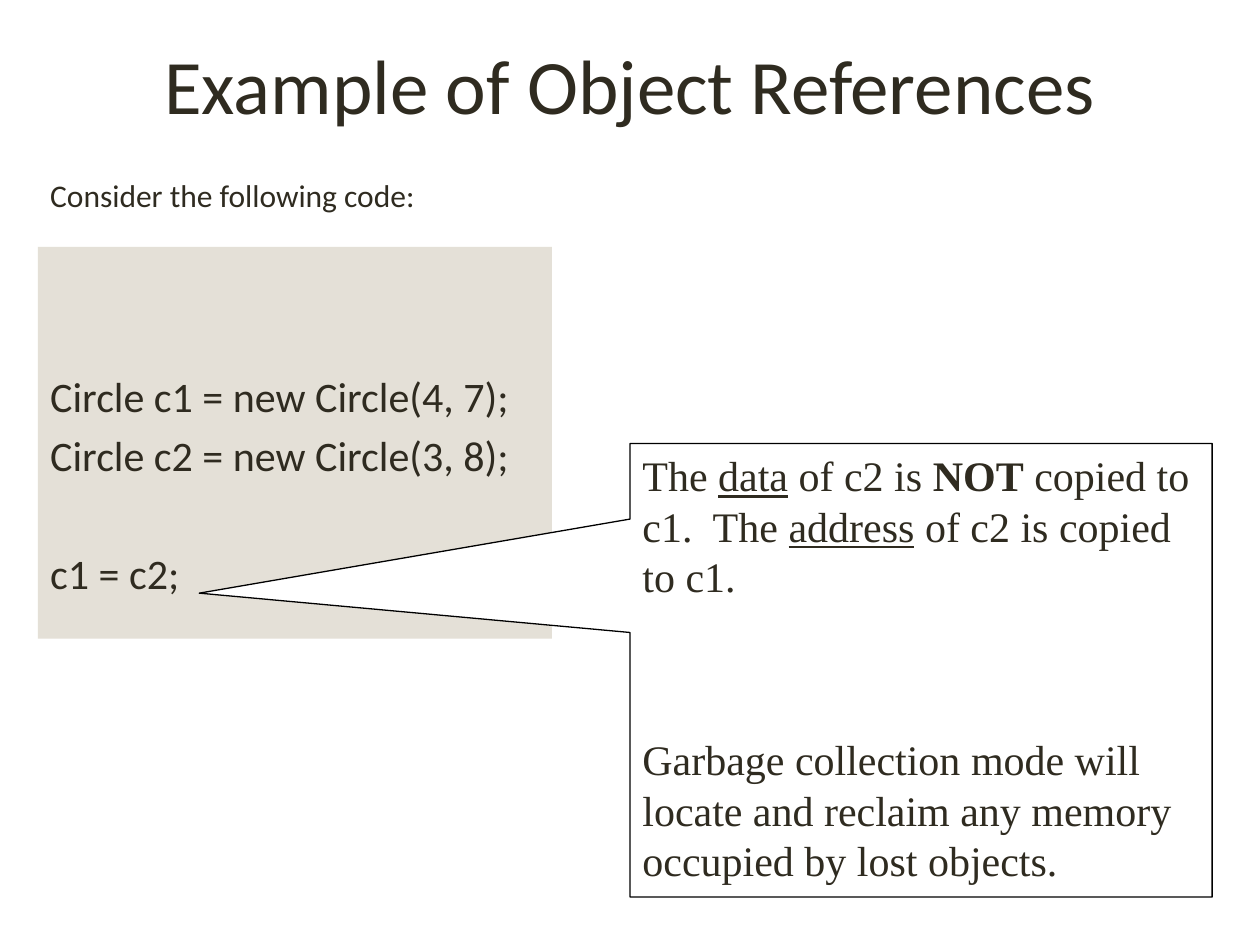
from pptx import Presentation
from pptx.dml.color import RGBColor
from pptx.enum.shapes import MSO_SHAPE
from pptx.enum.text import MSO_ANCHOR, PP_ALIGN
from pptx.util import Inches, Pt

COLORS = {"text": "2F2B20", "code": "E4E0D7", "note": "FFFFFF", "line": "000000"}


def color(name):
    """Return the palette colour with this name."""
    return RGBColor.from_string(COLORS[name])


def write(shape, paras, size=24, font="Calibri", align=PP_ALIGN.LEFT,
          anchor=MSO_ANCHOR.TOP, wrap=True, gaps=()):
    """Fill a shape with paragraphs made of (text, style) runs."""
    frame = shape.text_frame
    frame.word_wrap = wrap
    frame.vertical_anchor = anchor
    for i, runs in enumerate(paras):
        para = frame.paragraphs[0] if i == 0 else frame.add_paragraph()
        para.alignment = align
        if i and gaps:
            para.space_before = Pt(gaps[i - 1])
        for text, style in runs:
            run = para.add_run()
            run.text = text
            run.font.name = font
            run.font.size = Pt(size)
            run.font.color.rgb = color("text")
            run.font.bold = style == "bold"
            run.font.underline = style == "under"


def panel(slide, kind, box, fill, line=None):
    """Add a filled preset shape with an optional thin outline."""
    shape = slide.shapes.add_shape(kind, *map(Inches, box))
    shape.shadow.inherit = False
    shape.fill.solid()
    shape.fill.fore_color.rgb = color(fill)
    if line:
        shape.line.color.rgb = color(line)
        shape.line.width = Pt(0.75)
    else:
        shape.line.fill.background()
    return shape


def head(slide, text):
    """Place and format the title."""
    title = slide.shapes.title
    title.left, title.top, title.width, title.height = map(Inches, (0.5, 0.04, 9, 1.25))
    write(title, [[(text, "")]], size=44, align=PP_ALIGN.CENTER, anchor=MSO_ANCHOR.MIDDLE)


def code(slide, lines, gaps):
    """Add the code panel."""
    shape = panel(slide, MSO_SHAPE.RECTANGLE, (0.3, 1.96, 4.08, 3.11), "code")
    shape.text_frame.margin_top = Inches(0.98)
    write(shape, [[(line, "")] for line in lines], gaps=gaps)


def note(slide, paras):
    """Add the callout that points at the assignment."""
    shape = panel(slide, MSO_SHAPE.RECTANGULAR_CALLOUT, (5, 3.52, 4.62, 3.6), "note", "line")
    shape.adjustments[0] = -1.24
    shape.adjustments[1] = -0.17
    write(shape, paras, font="Times New Roman", gaps=[76])


def main():
    """Build and save the slide."""
    deck = Presentation()
    deck.slide_width, deck.slide_height = Inches(10), Inches(7.5)
    slide = deck.slides.add_slide(deck.slide_layouts[5])
    head(slide, "Example of Object References")
    code(slide, ["Circle c1 = new Circle(4, 7);", "Circle c2 = new Circle(3, 8);",
                 "c1 = c2;"], gaps=[4.8, 38.9])
    note(slide, [
        [("The ", ""), ("data", "under"), (" of c2 is ", ""), ("NOT", "bold"),
         (" copied to c1.  The ", ""), ("address", "under"),
         (" of c2 is copied to c1.", "")],
        [("Garbage collection mode will locate and reclaim any memory "
          "occupied by lost objects.", "")],
    ])
    intro = slide.shapes.add_textbox(*map(Inches, (0.3, 1.35, 3.13, 0.4)))
    write(intro, [[("Consider the following code:", "")]], size=18, wrap=False)
    deck.save("out.pptx")


if __name__ == "__main__":
    main()
